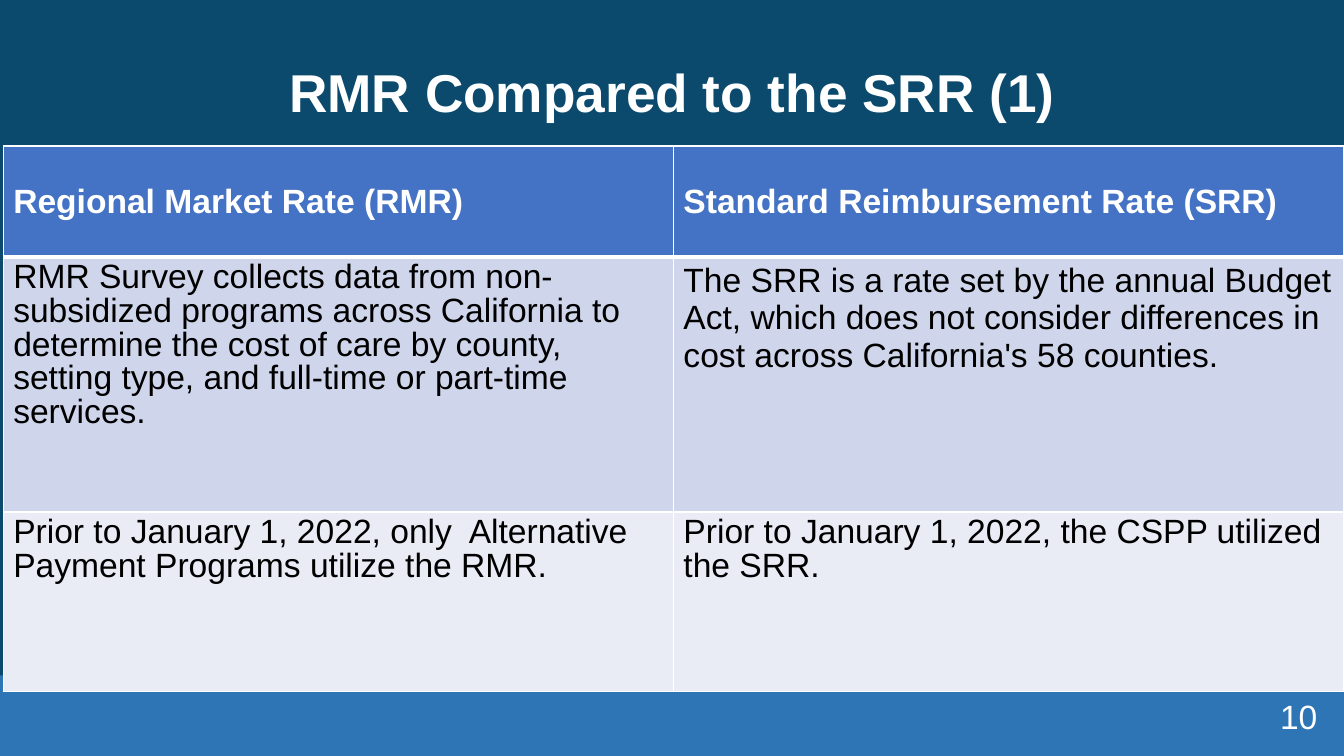
"""Builds the slide that compares the RMR with the SRR."""
from lxml.etree import SubElement
from pptx import Presentation
from pptx.dml.color import RGBColor
from pptx.enum.shapes import MSO_SHAPE
from pptx.enum.text import MSO_ANCHOR, PP_ALIGN
from pptx.oxml.ns import qn
from pptx.util import Cm, Pt

COLORS = {"background": "0C4A6D", "band": "2E75B6", "header": "4472C4",
          "odd": "CFD5EA", "even": "E9EBF5", "light": "FFFFFF", "dark": "000000"}
BODY = {"name": "Arial", "size": Pt(24), "bold": False}
BOLD = {**BODY, "bold": True}
TITLE = {**BOLD, "size": Pt(38)}
TIGHT = {"line_spacing": 0.9, "space_before": Pt(10)}
ROW_HEIGHTS = [2.79, 6.43, 4.52]
ROW_FILLS = ["header", "odd", "even"]
CELLS = [
    [("Regional Market Rate (RMR)", {}),
     ("Standard Reimbursement Rate (SRR)", {})],
    [("RMR Survey collects data from non-subsidized programs across California "
      "to determine the cost of care by county, setting type, and full-time or "
      "part-time services.", TIGHT),
     ("The SRR is a rate set by the annual Budget Act, which does not consider "
      "differences in cost across California's 58 counties.", {})],
    [("Prior to January 1, 2022, only  Alternative Payment Programs utilize "
      "the RMR.", TIGHT),
     ("Prior to January 1, 2022, the CSPP utilized the SRR.", TIGHT)],
]


def color(name):
    return RGBColor.from_string(COLORS[name])


def set_fill(fill, name):
    fill.solid()
    fill.fore_color.rgb = color(name)


def set_attributes(target, values):
    for key, value in values.items():
        setattr(target, key, value)


def write(tf, text, font, font_color, paragraph):
    p = tf.paragraphs[0]
    set_attributes(p, paragraph)
    r = p.add_run()
    r.text = text
    set_attributes(r.font, font)
    r.font.color.rgb = color(font_color)


def set_borders(cell, widths):
    tc_pr = cell._tc.get_or_add_tcPr()
    for i, (side, width) in enumerate(widths.items()):
        ln = SubElement(tc_pr, qn(f"a:ln{side}"), w=str(Pt(width)))
        fill = SubElement(ln, qn("a:solidFill"))
        SubElement(fill, qn("a:srgbClr"), val=COLORS["light"])
        tc_pr.insert(i, ln)


def add_title(s, text):
    title = s.shapes.title
    set_attributes(title, {"left": Cm(0.43), "top": Cm(0.56),
                           "width": Cm(33.02), "height": Cm(3.68)})
    tf = title.text_frame
    tf.vertical_anchor = MSO_ANCHOR.MIDDLE
    write(tf, text, TITLE, "light",
          {"alignment": PP_ALIGN.CENTER, "line_spacing": 0.9})


def add_band(s, width):
    band = s.shapes.add_shape(MSO_SHAPE.RECTANGLE, 0, Cm(17.02), width, Cm(2.03))
    band.shadow.inherit = False
    set_fill(band.fill, "band")
    band.line.fill.background()


def add_comparison(s):
    table = s.shapes.add_table(len(CELLS), 2, Cm(0.08), Cm(3.68), Cm(33.78),
                               Cm(sum(ROW_HEIGHTS))).table
    for column in table.columns:
        column.width = Cm(16.89)
    for i, cells in enumerate(CELLS):
        table.rows[i].height = Cm(ROW_HEIGHTS[i])
        header = i == 0
        for j, (text, paragraph) in enumerate(cells):
            cell = table.cell(i, j)
            cell.vertical_anchor = MSO_ANCHOR.MIDDLE if header else MSO_ANCHOR.TOP
            set_fill(cell.fill, ROW_FILLS[i])
            set_borders(cell, {"L": 1, "R": 1, "T": 3 if i == 1 else 1,
                               "B": 3 if header else 1})
            write(cell.text_frame, text, BOLD if header else BODY,
                  "light" if header else "dark", paragraph)


def add_page_number(s, text):
    tf = s.shapes.add_textbox(Cm(25.83), Cm(17.53), Cm(7.62), Cm(1.02)).text_frame
    set_attributes(tf, {"word_wrap": True, "vertical_anchor": MSO_ANCHOR.MIDDLE})
    write(tf, text, BODY, "light", {"alignment": PP_ALIGN.RIGHT})


def main():
    prs = Presentation()
    set_attributes(prs, {"slide_width": Cm(33.87), "slide_height": Cm(19.05)})
    s = prs.slides.add_slide(prs.slide_layouts[5])
    set_fill(s.background.fill, "background")
    add_band(s, prs.slide_width)
    add_title(s, "RMR Compared to the SRR (1)")
    add_comparison(s)
    add_page_number(s, "10")
    prs.save("out.pptx")


if __name__ == "__main__":
    main()
